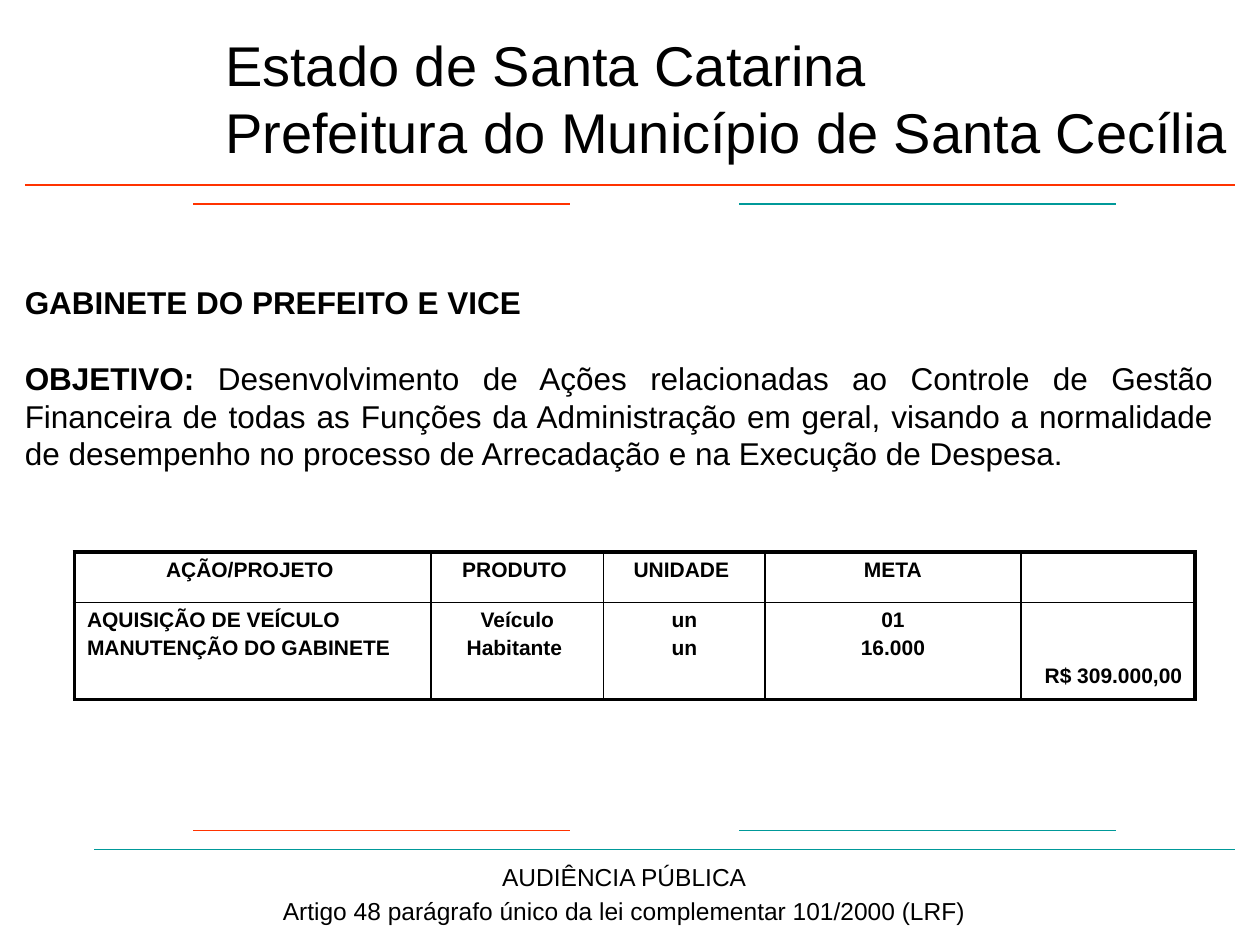
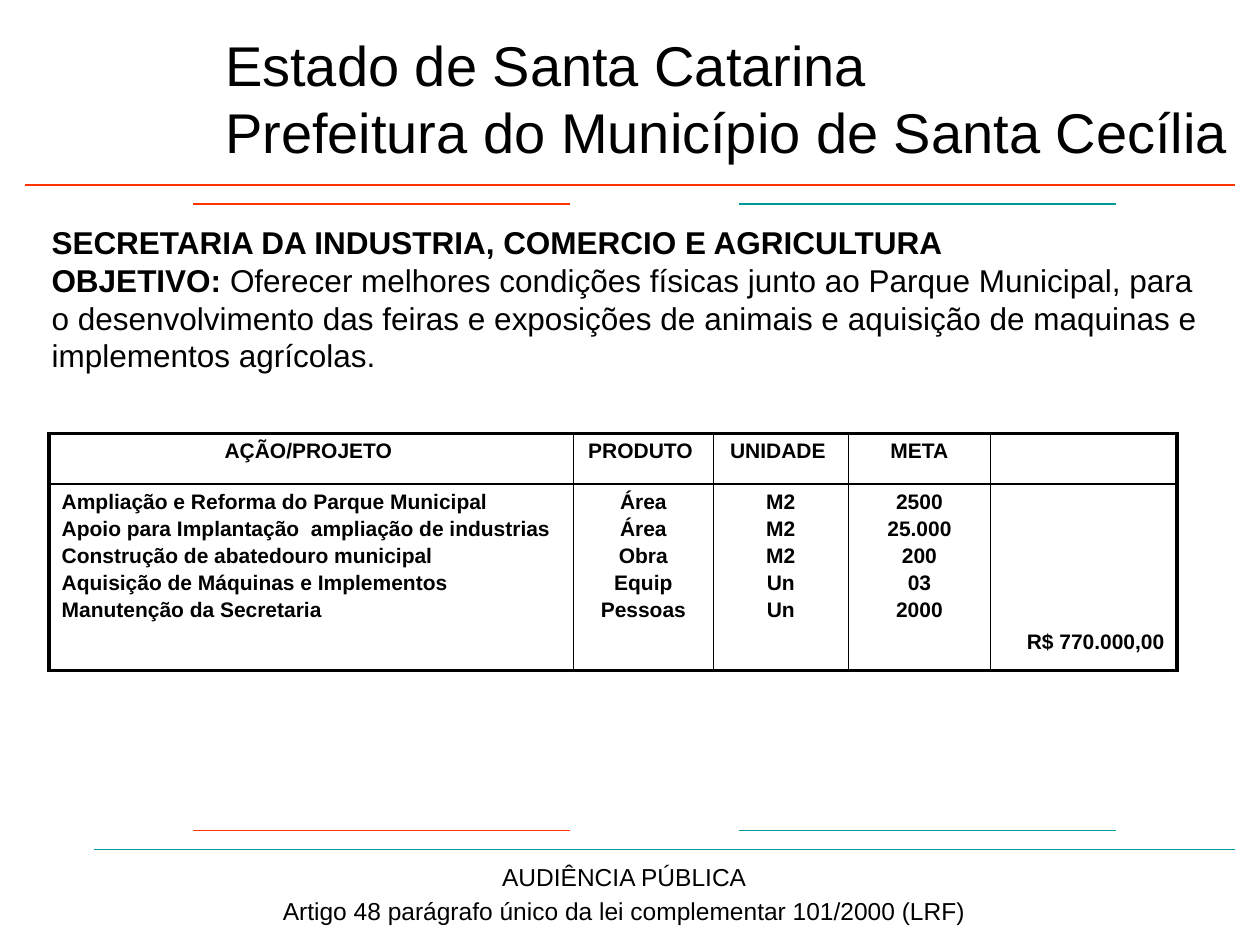
from dataclasses import dataclass

from lxml import etree
from pptx import Presentation
from pptx.dml.color import RGBColor
from pptx.enum.shapes import MSO_CONNECTOR
from pptx.enum.text import MSO_ANCHOR, PP_ALIGN
from pptx.oxml.ns import qn
from pptx.util import Cm, Pt

LEFT, CENTER, RIGHT, JUSTIFY = PP_ALIGN.LEFT, PP_ALIGN.CENTER, PP_ALIGN.RIGHT, PP_ALIGN.JUSTIFY
TOP, MIDDLE, BOTTOM = MSO_ANCHOR.TOP, MSO_ANCHOR.MIDDLE, MSO_ANCHOR.BOTTOM
STRAIGHT = MSO_CONNECTOR.STRAIGHT


@dataclass(frozen=True)
class Theme:
    font: str = "Arial"
    ink: str = "000000"
    red: str = "FF3300"
    teal: str = "009999"
    title_size: float = 32
    body_size: float = 18
    footer_size: float = 14
    table_size: float = 12
    rule_width: float = 0.75
    inner_border: float = 1
    outer_border: float = 2.25
    footer_gap: float = 2.8
    table_gap: float = 2


THEME = Theme()

TITLE = ["Estado de Santa Catarina", "Prefeitura do Município de Santa Cecília"]
FOOTER = ["AUDIÊNCIA PÚBLICA", "Artigo 48 parágrafo único da lei complementar 101/2000 (LRF)"]
HEADERS = ["AÇÃO/PROJETO ", "PRODUTO ", "UNIDADE ", "META", ""]
TITLE_BOX = (4.29, -0.08, 21.59, 4.09)
FOOTER_BOX = (0.89, 17.25, 23.39, 1.8)

LONG_RULES = [(0.5, 24.9, 3.73, THEME.red), (1.9, 24.9, 17.12, THEME.teal)]
SHORT_RULES = [
    (start, end, y, color)
    for y in (4.11, 16.74)
    for start, end, color in ((3.9, 11.5, THEME.red), (14.9, 22.5, THEME.teal))
]

DEPARTMENTS = [
    {
        "name": "GABINETE DO PREFEITO E VICE",
        "label": "OBJETIVO: ",
        "goal": "Desenvolvimento de Ações relacionadas ao Controle de Gestão Financeira "
                "de todas as Funções da Administração em geral, visando a normalidade de "
                "desempenho no processo de Arrecadação e na Execução de Despesa.",
        "goal_align": JUSTIFY,
        "goal_gap": 21.5,
        "text_box": (0.25, 5.59, 24.46, 4.06),
        "actions": [
            ("AQUISIÇÃO DE VEÍCULO", "Veículo", "un", "01"),
            ("MANUTENÇÃO DO GABINETE", "Habitante ", "un", "16.000"),
        ],
        "amount": "R$ 309.000,00",
        "amount_margin": 0.23,
        "table_origin": (1.5, 11.13),
        "columns": [7.19, 3.48, 3.25, 5.16, 3.51],
        "rows": [1.0, 1.95],
    },
    {
        "name": "SECRETARIA DA INDUSTRIA, COMERCIO E AGRICULTURA",
        "label": "OBJETIVO:",
        "goal": " Oferecer melhores condições físicas junto ao Parque Municipal, para o "
                "desenvolvimento das feiras e exposições de animais e aquisição de "
                "maquinas e implementos agrícolas.",
        "goal_align": LEFT,
        "goal_gap": 0,
        "text_box": (0.79, 4.37, 23.85, 3.33),
        "actions": [
            ("Ampliação e Reforma do Parque Municipal", "Área", "M2", "2500"),
            ("Apoio para Implantação  ampliação de industrias", "Área", "M2", "25.000"),
            ("Construção de abatedouro municipal", "Obra", "M2", "200"),
            ("Aquisição de Máquinas e Implementos", "Equip", "Un", "03"),
            ("Manutenção da Secretaria", "Pessoas", "Un", "2000"),
        ],
        "amount": "R$ 770.000,00",
        "amount_margin": 0.33,
        "table_origin": (0.99, 8.74),
        "columns": [10.57, 2.82, 2.72, 2.87, 3.76],
        "rows": [0.78, 3.76],
    },
]


def add_run(paragraph, text, size, bold=False):
    run = paragraph.add_run()
    run.text = text
    run.font.name = THEME.font
    run.font.size = Pt(size)
    run.font.bold = bold
    run.font.color.rgb = RGBColor.from_string(THEME.ink)


def add_frame(slide, box, anchor=TOP):
    frame = slide.shapes.add_textbox(*map(Cm, box)).text_frame
    frame.word_wrap = True
    frame.vertical_anchor = anchor
    return frame


def write_lines(frame, lines, size, align, gap, bold=False):
    for index, line in enumerate(lines):
        paragraph = frame.add_paragraph() if index else frame.paragraphs[0]
        paragraph.alignment = align
        paragraph.space_before = Pt(gap if index else 0)
        add_run(paragraph, line, size, bold)


def add_rule(slide, start, end, y, color):
    rule = slide.shapes.add_connector(STRAIGHT, Cm(start), Cm(y), Cm(end), Cm(y))
    rule.line.color.rgb = RGBColor.from_string(color)
    rule.line.width = Pt(THEME.rule_width)
    etree.SubElement(rule._element.spPr, qn("a:effectLst"))


def add_page_frame(slide):
    title = add_frame(slide, TITLE_BOX, MIDDLE).paragraphs[0]
    for index, line in enumerate(TITLE):
        if index:
            title.add_line_break()
        add_run(title, line, THEME.title_size)
    write_lines(add_frame(slide, FOOTER_BOX), FOOTER, THEME.footer_size, CENTER, THEME.footer_gap)
    for rule in LONG_RULES + SHORT_RULES:
        add_rule(slide, *rule)


def add_objective(slide, department):
    frame = add_frame(slide, department["text_box"])
    write_lines(frame, [department["name"]], THEME.body_size, LEFT, 0, True)
    goal = frame.add_paragraph()
    goal.alignment = department["goal_align"]
    goal.space_before = Pt(department["goal_gap"])
    add_run(goal, department["label"], THEME.body_size, True)
    add_run(goal, department["goal"], THEME.body_size)


def set_borders(cell, outer_edges):
    properties = cell._tc.get_or_add_tcPr()
    for index, (edge, is_outer) in enumerate(outer_edges.items()):
        width = THEME.outer_border if is_outer else THEME.inner_border
        border = etree.Element(qn(f"a:ln{edge}"), w=str(Pt(width)))
        fill = etree.SubElement(border, qn("a:solidFill"))
        etree.SubElement(fill, qn("a:srgbClr"), val=THEME.ink)
        properties.insert(index, border)


def add_action_table(slide, department):
    columns, rows = department["columns"], department["rows"]
    left, top = department["table_origin"]
    table = slide.shapes.add_table(
        len(rows), len(columns), Cm(left), Cm(top), Cm(sum(columns)), Cm(sum(rows))
    ).table
    table.first_row = table.horz_banding = False
    for column, width in zip(table.columns, columns):
        column.width = Cm(width)
    for row, height in zip(table.rows, rows):
        row.height = Cm(height)

    header = [[text] for text in HEADERS]
    body = [*zip(*department["actions"]), [department["amount"]]]
    alignments = [[CENTER] * 5, [LEFT, CENTER, CENTER, CENTER, RIGHT]]
    last_row, last_column = len(rows) - 1, len(columns) - 1
    for r, contents in enumerate([header, body]):
        for c, lines in enumerate(contents):
            cell = table.cell(r, c)
            cell.fill.background()
            set_borders(cell, {"L": c == 0, "R": c == last_column, "T": r == 0, "B": r == last_row})
            write_lines(cell.text_frame, lines, THEME.table_size, alignments[r][c],
                        THEME.table_gap, True)
    amount_cell = table.cell(last_row, last_column)
    amount_cell.vertical_anchor = BOTTOM
    amount_cell.margin_bottom = Cm(department["amount_margin"])


def main():
    presentation = Presentation()
    presentation.slide_width, presentation.slide_height = Cm(25.4), Cm(19.05)
    for department in DEPARTMENTS:
        slide = presentation.slides.add_slide(presentation.slide_layouts[6])
        add_page_frame(slide)
        add_objective(slide, department)
        add_action_table(slide, department)
    presentation.save("out.pptx")


if __name__ == "__main__":
    main()
